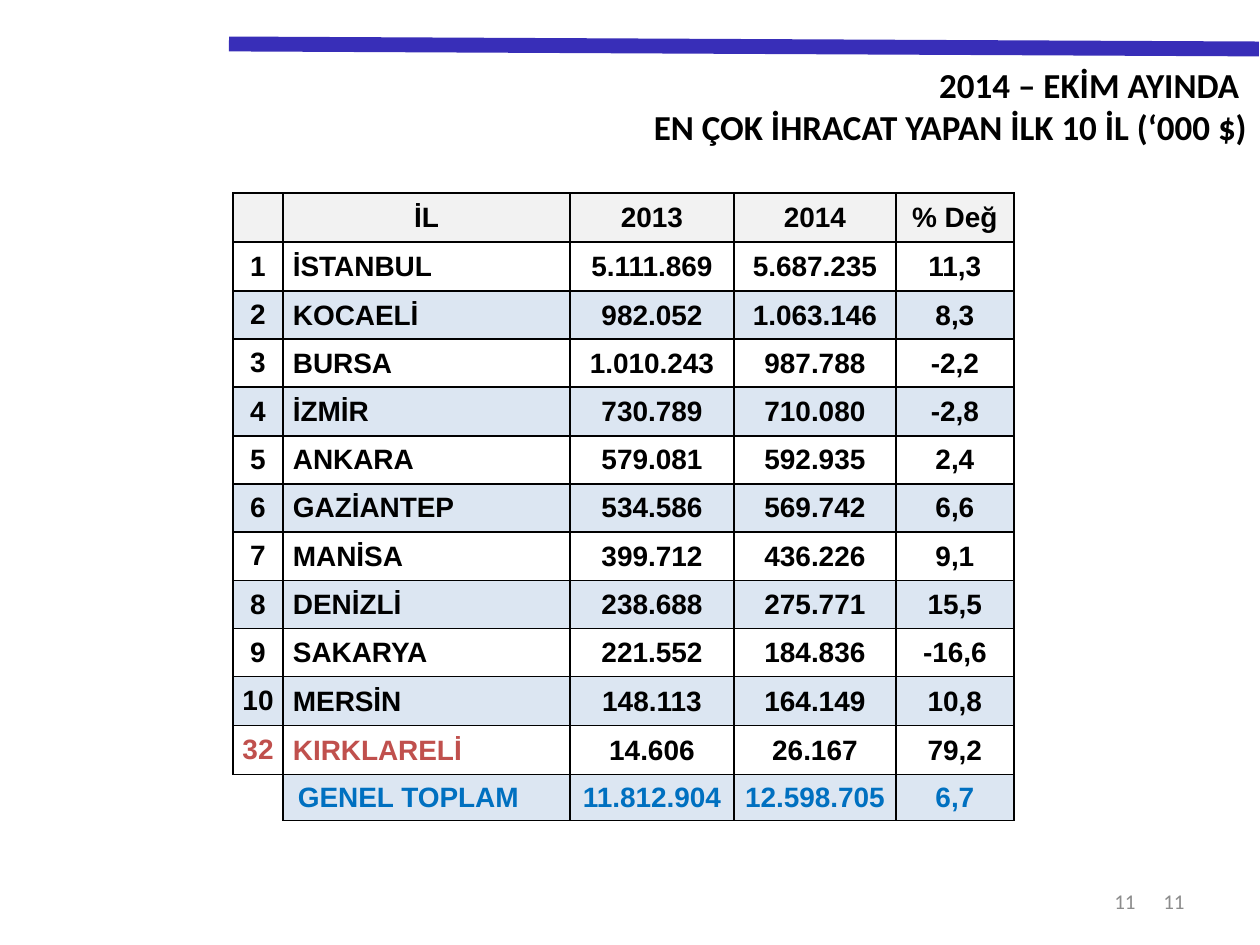
from dataclasses import dataclass

from lxml import etree
from pptx import Presentation
from pptx.dml.color import RGBColor
from pptx.enum.shapes import MSO_CONNECTOR
from pptx.enum.text import MSO_ANCHOR, MSO_AUTO_SIZE, PP_ALIGN
from pptx.oxml.ns import qn
from pptx.util import Emu, Pt

BLACK = RGBColor(0x00, 0x00, 0x00)
GREY = RGBColor(0x8C, 0x8C, 0x8C)
INDIGO = RGBColor(0x38, 0x2E, 0xB8)
RED = RGBColor(0xC0, 0x50, 0x4D)
BLUE = RGBColor(0x00, 0x70, 0xC0)
HEADER_FILL = RGBColor(0xF2, 0xF2, 0xF2)
BAND_FILL = RGBColor(0xDC, 0xE6, 0xF2)

LEFT, CENTER, RIGHT = PP_ALIGN.LEFT, PP_ALIGN.CENTER, PP_ALIGN.RIGHT
TOP, MIDDLE = MSO_ANCHOR.TOP, MSO_ANCHOR.MIDDLE
GROW = MSO_AUTO_SIZE.SHAPE_TO_FIT_TEXT
STRAIGHT = MSO_CONNECTOR.STRAIGHT

PX_PER_INCH = 126
COLUMN_WIDTHS = [50, 287, 164, 162, 118]
ROW_HEIGHTS = [49] + [49, 48, 48] * 3 + [49, 49, 46]
ALL_SIDES = ("L", "R", "T", "B")


@dataclass
class Box:
    left: int
    top: int
    width: int
    height: int

    def emu(self) -> tuple[Emu, ...]:
        return tuple(map(px, (self.left, self.top, self.width, self.height)))


@dataclass
class Province:
    rank: str
    name: str
    exports_2013: str
    exports_2014: str
    change: str
    label_color: RGBColor = BLACK
    value_color: RGBColor = BLACK
    indent: int = 10

    def texts(self) -> list[str]:
        return [self.rank, self.name, self.exports_2013, self.exports_2014, self.change]


HEADER = Province("", "İL", "2013", "2014", "% Değ")
PROVINCES = [
    Province("1", "İSTANBUL", "5.111.869", "5.687.235", "11,3"),
    Province("2", "KOCAELİ", "982.052", "1.063.146", "8,3"),
    Province("3", "BURSA", "1.010.243", "987.788", "-2,2"),
    Province("4", "İZMİR", "730.789", "710.080", "-2,8"),
    Province("5", "ANKARA", "579.081", "592.935", "2,4"),
    Province("6", "GAZİANTEP", "534.586", "569.742", "6,6"),
    Province("7", "MANİSA", "399.712", "436.226", "9,1"),
    Province("8", "DENİZLİ", "238.688", "275.771", "15,5"),
    Province("9", "SAKARYA", "221.552", "184.836", "-16,6"),
    Province("10", "MERSİN", "148.113", "164.149", "10,8"),
    Province("32", "KIRKLARELİ", "14.606", "26.167", "79,2", label_color=RED),
    Province("", "GENEL TOPLAM", "11.812.904", "12.598.705", "6,7", BLUE, BLUE, 15),
]
PAGE_NUMBERS = [Box(903, 876, 294, 50), Box(883, 876, 265, 50)]


def px(length: int) -> Emu:
    return Emu(round(length * 914400 / PX_PER_INCH))


def format_text(frame, font: str, size: int, color: RGBColor, bold: bool, align) -> None:
    for para in frame.paragraphs:
        para.alignment = align
        for span in para.runs:
            span.font.name = font
            span.font.size = Pt(size)
            span.font.bold = bold
            span.font.color.rgb = color


def add_title(page) -> None:
    title = page.shapes.title
    title.left, title.top, title.width, title.height = Box(134, 57, 1126, 97).emu()
    frame = title.text_frame
    frame.text = "2014 – EKİM AYINDA \nEN ÇOK İHRACAT YAPAN İLK 10 İL (‘000 $)"
    frame.word_wrap = True
    frame.auto_size = GROW
    frame.vertical_anchor = TOP
    format_text(frame, "Calibri", 20, BLACK, True, RIGHT)


def add_rule(page) -> None:
    rule = page.shapes.add_connector(STRAIGHT, px(229), px(44), px(1259), px(49))
    rule.line.color.rgb = INDIGO
    rule.line.width = Pt(8.5)
    etree.SubElement(rule._element.spPr, qn("a:effectLst"))


def add_page_number(page, box: Box) -> None:
    frame = page.shapes.add_textbox(*box.emu()).text_frame
    frame.text = "11"
    frame.word_wrap = True
    frame.vertical_anchor = MIDDLE
    format_text(frame, "Calibri", 12, GREY, False, RIGHT)


def add_borders(cell, sides: tuple[str, ...]) -> None:
    properties = cell._tc.get_or_add_tcPr()
    for side in ALL_SIDES:
        border = etree.SubElement(properties, qn(f"a:ln{side}"), w=str(Pt(1)))
        if side in sides:
            fill = etree.SubElement(border, qn("a:solidFill"))
            etree.SubElement(fill, qn("a:srgbClr"), val=str(BLACK))
        else:
            etree.SubElement(border, qn("a:noFill"))


def fill_cell(cell, color: RGBColor | None) -> None:
    if color is None:
        cell.fill.background()
    else:
        cell.fill.solid()
        cell.fill.fore_color.rgb = color


def add_row(table, index: int, province: Province) -> None:
    is_header = index == 0
    fill = HEADER_FILL if is_header else BAND_FILL if index % 2 == 0 else None
    for column, text in enumerate(province.texts()):
        cell = table.cell(index, column)
        is_corner = province is PROVINCES[-1] and column == 0
        is_name = column == 1 and not is_header
        edge = 0 if column == 0 else 1
        cell.margin_left = px(province.indent if is_name else edge)
        cell.margin_right = cell.margin_top = px(edge)
        cell.margin_bottom = 0
        cell.vertical_anchor = MIDDLE
        cell.text_frame.text = text
        color = province.label_color if column < 2 else province.value_color
        format_text(cell.text_frame, "Arial", 16, color, True, LEFT if is_name else CENTER)
        add_borders(cell, ("T", "R") if is_corner else ALL_SIDES)
        fill_cell(cell, None if is_corner else fill)


def add_export_table(page) -> None:
    box = Box(233, 193, sum(COLUMN_WIDTHS), sum(ROW_HEIGHTS))
    table = page.shapes.add_table(len(ROW_HEIGHTS), len(COLUMN_WIDTHS), *box.emu()).table
    table.first_row = False
    table.horz_banding = False
    for column, width in zip(table.columns, COLUMN_WIDTHS):
        column.width = px(width)
    for row, height in zip(table.rows, ROW_HEIGHTS):
        row.height = px(height)
    for index, province in enumerate([HEADER, *PROVINCES]):
        add_row(table, index, province)


def main() -> None:
    deck = Presentation()
    deck.slide_width, deck.slide_height = px(1260), px(945)
    page = deck.slides.add_slide(deck.slide_layouts.get_by_name("Title Only"))
    add_rule(page)
    for box in PAGE_NUMBERS:
        add_page_number(page, box)
    add_title(page)
    add_export_table(page)
    deck.save("out.pptx")


if __name__ == "__main__":
    main()
